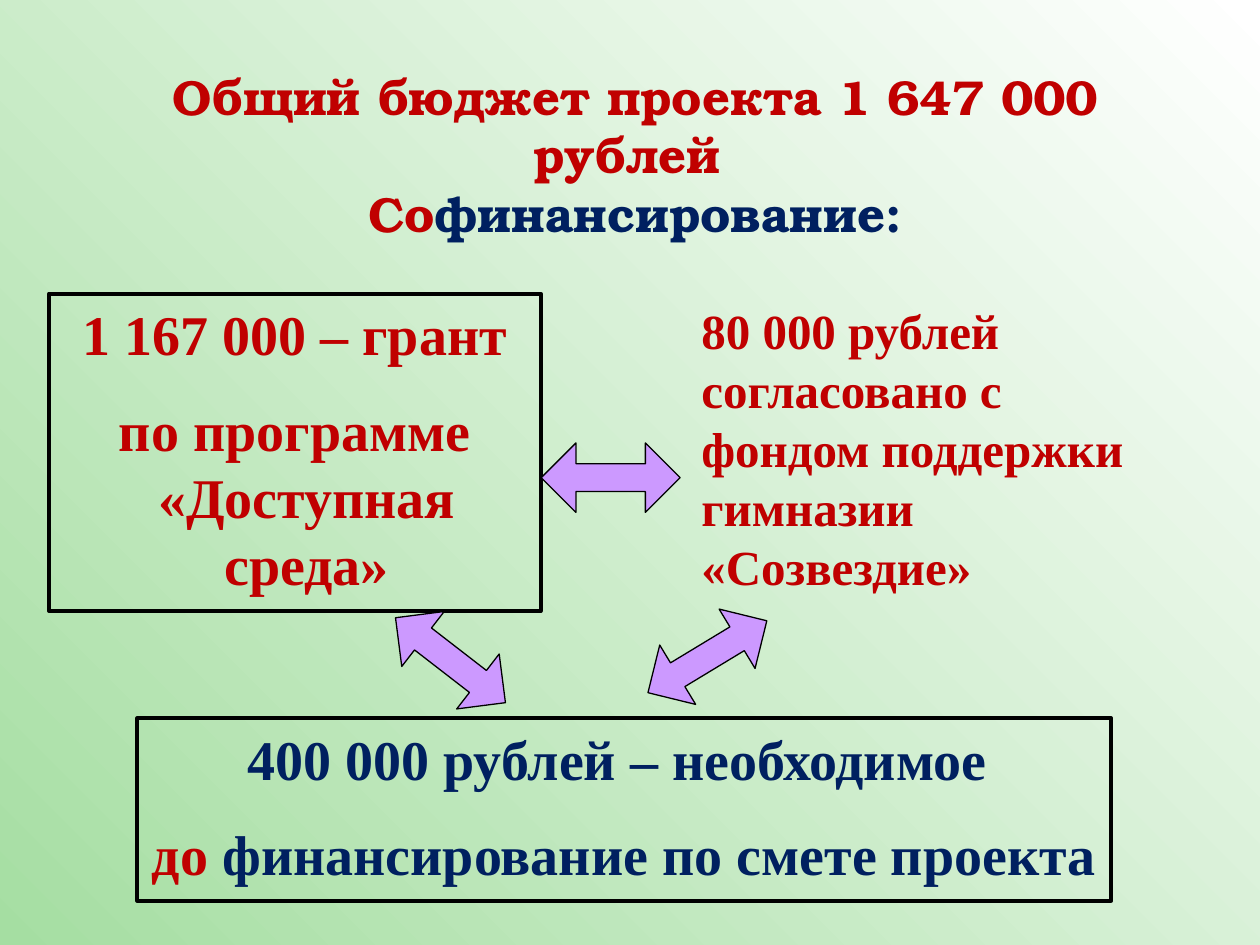
from pptx import Presentation
from pptx.dml.color import RGBColor
from pptx.enum.shapes import MSO_SHAPE
from pptx.enum.text import MSO_ANCHOR, MSO_AUTO_SIZE, PP_ALIGN
from pptx.util import Cm, Pt

RED = RGBColor(0xC0, 0x00, 0x00)
NAVY = RGBColor(0x00, 0x20, 0x60)
BLACK = RGBColor(0x00, 0x00, 0x00)
LILAC = RGBColor(0xCC, 0x99, 0xFF)
GREEN = RGBColor(0xA5, 0xDE, 0xA2)
WHITE = RGBColor(0xFF, 0xFF, 0xFF)
TITLE_FONT = "TeX Gyre Bonum"
BODY_FONT = "Times New Roman"


def paint_background(page):
    fill = page.background.fill
    fill.gradient()
    fill.gradient_angle = 45
    for stop, color in zip(fill.gradient_stops, (GREEN, WHITE)):
        stop.color.rgb = color


def place(shape, left, top, width, height):
    shape.left, shape.top = Cm(left), Cm(top)
    shape.width, shape.height = Cm(width), Cm(height)


def add_span(para, text, color, size, font=BODY_FONT):
    span = para.add_run()
    span.text = text
    span.font.name = font
    span.font.size = Pt(size)
    span.font.bold = True
    span.font.color.rgb = color


def write_paragraphs(shape, paragraphs, size, align, gap=0, hanging=0):
    """Fill a shape with paragraphs, each a list of (text, color) spans."""
    frame = shape.text_frame
    frame.word_wrap = True
    frame.auto_size = MSO_AUTO_SIZE.NONE
    frame.vertical_anchor = MSO_ANCHOR.TOP
    for index, spans in enumerate(paragraphs):
        para = frame.add_paragraph() if index else frame.paragraphs[0]
        para.alignment = align
        if index and gap:
            para.space_before = Pt(gap)
        if hanging:
            properties = para._p.get_or_add_pPr()
            properties.set("marL", str(Cm(hanging)))
            properties.set("indent", str(-Cm(hanging)))
        for text, color in spans:
            add_span(para, text, color, size)


def add_title(page):
    title = page.shapes.title
    place(title, 1.4, 0.79, 22.81, 4.17)
    frame = title.text_frame
    frame.auto_size = MSO_AUTO_SIZE.NONE
    frame.vertical_anchor = MSO_ANCHOR.MIDDLE
    frame.margin_top = Cm(0.6)
    para = frame.paragraphs[0]
    para.alignment = PP_ALIGN.CENTER
    add_span(para, "Общий бюджет проекта 1 647 000 рублей ", RED, 28, TITLE_FONT)
    para.add_line_break()
    add_span(para, "Со", RED, 28, TITLE_FONT)
    add_span(para, "финансирование:", NAVY, 28, TITLE_FONT)


def add_frame(page, position, paragraphs, hanging=0):
    box = page.shapes.add_shape(MSO_SHAPE.RECTANGLE, *map(Cm, position))
    box.shadow.inherit = False
    box.fill.background()
    box.line.color.rgb = BLACK
    box.line.width = Pt(2.25)
    write_paragraphs(box, paragraphs, 32, PP_ALIGN.CENTER, gap=16, hanging=hanging)


def add_double_arrow(page, left, top, rotation):
    arrow = page.shapes.add_shape(
        MSO_SHAPE.UP_DOWN_ARROW, Cm(left), Cm(top), Cm(1.4), Cm(2.8))
    arrow.shadow.inherit = False
    arrow.rotation = rotation
    arrow.adjustments[0] = 0.5
    arrow.adjustments[1] = 0.4
    arrow.fill.solid()
    arrow.fill.fore_color.rgb = LILAC
    arrow.line.color.rgb = BLACK
    arrow.line.width = Pt(0.75)


def add_fund_note(page):
    box = page.shapes.add_textbox(Cm(13.89), Cm(5.94), Cm(9.32), Cm(6.25))
    write_paragraphs(box, [
        [("80 000 рублей согласовано с фондом поддержки", RED)],
        [("гимназии «Созвездие»", RED)],
    ], 28, PP_ALIGN.LEFT)


def main():
    deck = Presentation()
    deck.slide_width, deck.slide_height = Cm(25.4), Cm(19.05)
    page = deck.slides.add_slide(deck.slide_layouts[5])
    paint_background(page)
    add_title(page)
    add_frame(page, (0.99, 5.92, 9.91, 6.4), [
        [("1 167 000 – грант", RED)],
        [("по программе «Доступная среда»", RED)],
    ], hanging=0.48)
    add_frame(page, (2.77, 14.48, 19.63, 3.68), [
        [("400 000 рублей – необходимое ", NAVY)],
        [("до ", RED), ("финансирование по смете проекта ", NAVY)],
    ])
    for left, top, rotation in ((11.61, 8.23, 90), (13.56, 11.84, 58.8),
                                (8.38, 11.91, 127.7)):
        add_double_arrow(page, left, top, rotation)
    add_fund_note(page)
    deck.save("out.pptx")


if __name__ == "__main__":
    main()
